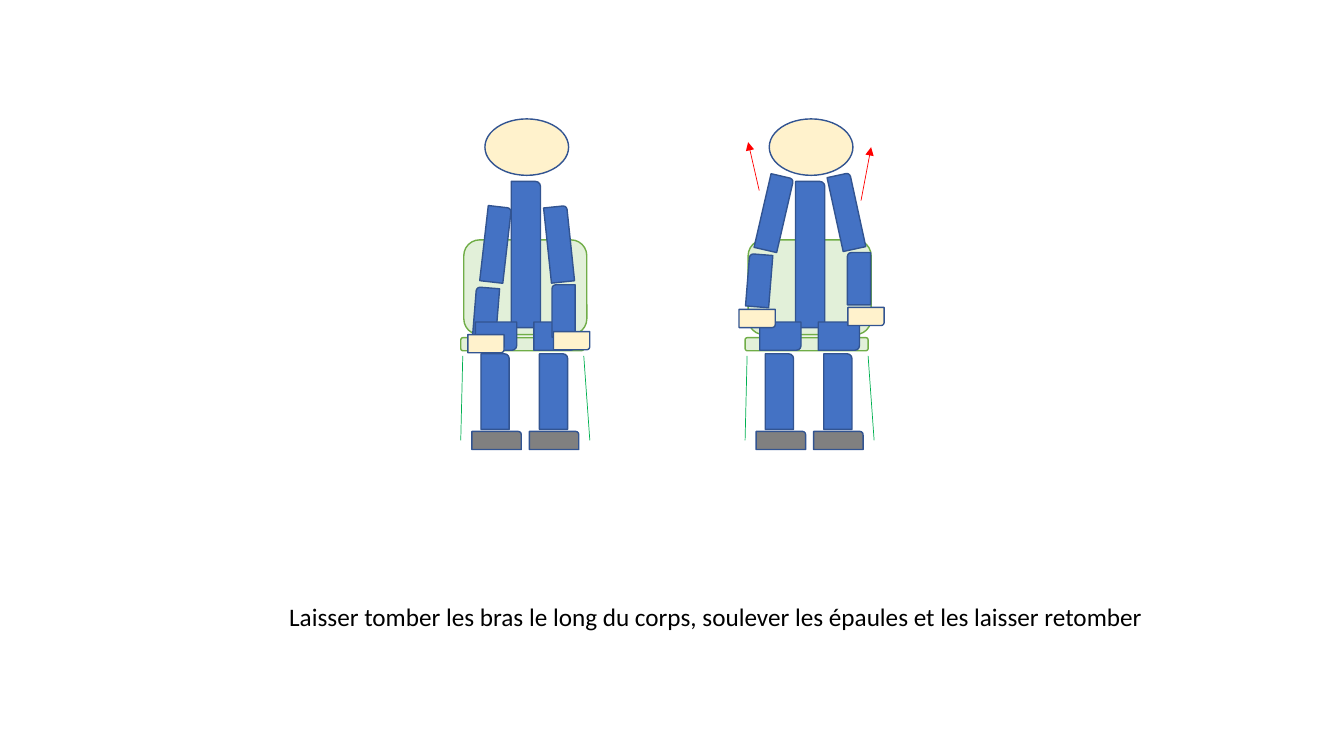
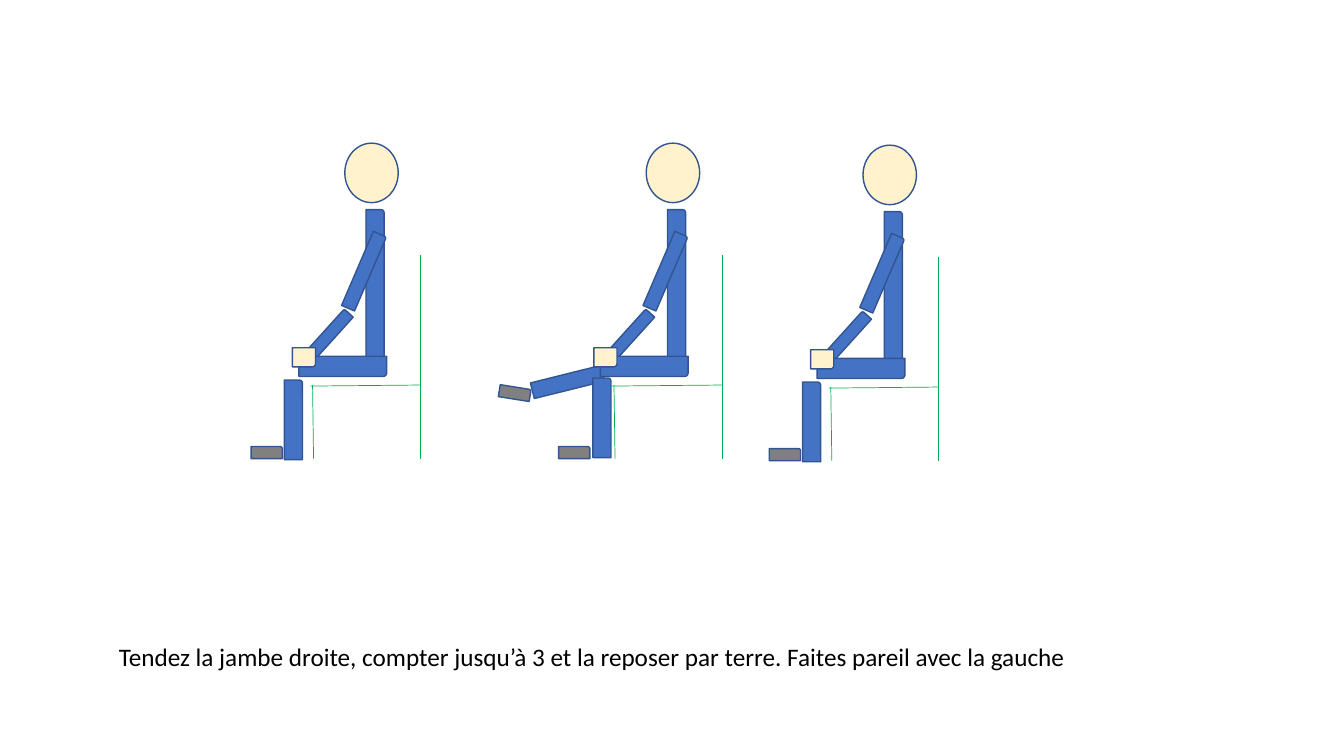
from dataclasses import dataclass, replace

from pptx import Presentation
from pptx import util as u
from pptx.dml.color import RGBColor
from pptx.enum import shapes as s, text as t
from pptx.oxml import ns, xmlchemy as xc

# Colours, shapes and grid (a cell is a tenth of an inch)
BLUE = RGBColor(0x44, 0x72, 0xC4)
NAVY = RGBColor(0x32, 0x54, 0x91)
SKIN = RGBColor(0xFF, 0xF2, 0xCC)
GREY = RGBColor(0x80, 0x80, 0x80)
MINT = RGBColor(0xE2, 0xF0, 0xD9)
LEAF = RGBColor(0x70, 0xAD, 0x47)
GREEN = RGBColor(0x00, 0xB0, 0x50)
RED = RGBColor(0xFF, 0x00, 0x00)
BLACK = RGBColor(0x00, 0x00, 0x00)
OVAL = s.MSO_SHAPE.OVAL
SOFT = s.MSO_SHAPE.ROUNDED_RECTANGLE
LIMB = s.MSO_SHAPE.ROUND_1_RECTANGLE
FONT = "Calibri"


def cell(n: float) -> int:
    return u.Inches(n / 10)


@dataclass(frozen=True)
class Part:
    """A body or chair part, in cells from the figure's corner."""
    col: float
    row: float
    wide: float
    high: float
    turn: float = 0
    fill: RGBColor = BLUE
    edge: RGBColor = NAVY
    kind: s.MSO_SHAPE = LIMB
    flip: bool = False


@dataclass(frozen=True)
class Line:
    """A chair line or an arrow, in cells from the figure's corner."""
    x1: float
    y1: float
    x2: float
    y2: float
    color: RGBColor = GREEN
    arrow: bool = False


@dataclass(frozen=True)
class Arm:
    """Corners of one arm seen from the front: upper arm, forearm, hand."""
    upper: tuple[float, float]
    lean: float
    fore: tuple[float, float]
    tilt: float
    hand: tuple[float, float]


# Drawing
def draw_part(group, part: Part, col: float, row: float) -> None:
    shape = group.shapes.add_shape(part.kind, cell(col + part.col), cell(row + part.row),
                                   cell(part.wide), cell(part.high))
    shape.rotation = part.turn
    if part.flip:
        shape._element.spPr.xfrm.set("flipV", "1")
    shape.shadow.inherit = False
    shape.fill.solid()
    shape.fill.fore_color.rgb = part.fill
    shape.line.color.rgb = part.edge
    shape.line.width = u.Pt(1)


def draw_line(group, line: Line, col: float, row: float) -> None:
    link = group.shapes.add_connector(s.MSO_CONNECTOR.STRAIGHT, cell(col + line.x1), cell(row + line.y1),
                                      cell(col + line.x2), cell(row + line.y2))
    link.line.color.rgb = line.color
    link.line.width = u.Pt(0.5)
    props = link._element.spPr
    if line.arrow:
        head = xc.OxmlElement("a:tailEnd")
        head.set("type", "triangle")
        props.find(ns.qn("a:ln")).append(head)
    props.append(xc.OxmlElement("a:effectLst"))


def draw(slide, col: float, row: float, items: list[Part | Line]) -> None:
    """Draw one figure as a group, from back to front."""
    group = slide.shapes.add_group_shape()
    for item in items:
        pen = draw_part if isinstance(item, Part) else draw_line
        pen(group, item, col, row)


def write(slide, words: str, *, col: float, row: float, wide: float, high: float = 4,
          size: float = 18, color: RGBColor = BLACK) -> None:
    frame = slide.shapes.add_textbox(cell(col), cell(row), cell(wide), cell(high)).text_frame
    frame.word_wrap = True
    frame.auto_size = t.MSO_AUTO_SIZE.SHAPE_TO_FIT_TEXT
    run = frame.paragraphs[0].add_run()
    run.text = words
    run.font.name = FONT
    run.font.size = u.Pt(size)
    run.font.color.rgb = color


# Figures
def front(left: Arm, right: Arm) -> list[Part | Line]:
    def arm(side: Arm) -> list[Part]:
        return [Part(*side.upper, 7.5, 2.3, side.lean, flip=True),
                Part(*side.fore, 5.2, 2.3, side.tilt)]

    def leg(col: float) -> list[Part]:
        return [Part(col, 23.3, 2.8, 7.5), Part(col + 0.1, 19.5, 2.8, 4.1, 90)]

    hands = [Part(*side.hand, 3.6, 1.8, fill=SKIN, flip=True) for side in (left, right)]
    feet = [Part(col, 31, 4.9, 1.8, fill=GREY) for col in (1.1, 6.8)]
    chair = [Part(0, 21.7, 12.2, 1.3, fill=MINT, edge=LEAF, kind=SOFT),
             Part(0.3, 12, 12.2, 9.4, fill=MINT, edge=LEAF, kind=SOFT)]
    body = [Part(2.4, 0, 8.3, 5.6, fill=SKIN, kind=OVAL), Part(5, 6.2, 2.9, 14.5)]
    props = [Line(0.2, 23.5, 0, 31.9), Line(12.2, 23.5, 12.8, 31.9)]
    return [*chair, *body, *arm(left), *leg(2), *leg(7.8), *arm(right), *hands, *feet, *props]


def side(lift: bool = False) -> list[Part | Line]:
    shin = Part(3.3, 23.5, 1.8, 7.9)
    foot = Part(0, 30.1, 3.1, 1.2, fill=GREY)
    body = [Part(9.3, 0, 5.3, 5.9, fill=SKIN, kind=OVAL),
            Part(11.4, 6.6, 1.8, 15.4),
            Part(7.2, 12, 8, 1.4, 293.3, flip=True),
            Part(5.1, 18.3, 5.5, 1.2, 312.1)]
    thigh = Part(8.1, 17.8, 2, 8.7, 90)
    hand = Part(4.1, 20.3, 2.3, 1.9, fill=SKIN, flip=True)
    chair = [Line(16.8, 11.1, 16.8, 31.3), Line(16.8, 24, 5.9, 24.1), Line(6.1, 24, 6.2, 31.3)]
    if not lift:
        return [*body, shin, thigh, foot, hand, *chair]
    high = [Part(0.7, 20.1, 1.6, 7.2, 76), thigh, replace(foot, col=-5.3, row=24.2, turn=9.1)]
    rest = [replace(shin, col=4, row=23.3), replace(foot, col=0.6)]
    return [*body, *high, hand, *chair, *rest]


# Slides
def lift_arms(slide) -> None:
    down = front(Arm((-0.3, 11.3), 276.5, (-0.1, 18.2), 274.6, (0.7, 21.4)),
                 Arm((6, 11.3), 264, (7.6, 17.9), 270, (9.2, 21.1)))
    up = front(Arm((-0.9, 8.2), 283, (-1.2, 14.9), 274.6, (-0.6, 18.9)),
               Arm((6.3, 8.1), 257.7, (8.7, 14.7), 270, (10.2, 18.7)))
    arrows = [Line(1.4, 7.1, 0.3, 2.3, RED, True), Line(11.5, 8.1, 12.5, 2.8, RED, True)]
    draw(slide, 45.7, 11.8, down)
    draw(slide, 73.9, 11.8, up + arrows)
    write(slide, "Laisser tomber les bras le long du corps, soulever les épaules et les laisser retomber",
          col=27.7, row=59.2, wide=96)


def lift_leg(slide) -> None:
    for col, row, lift in ((24.9, 14.2, False), (76.3, 14.4, False), (54.8, 14.2, True)):
        draw(slide, col, row, side(lift))
    write(slide, "Tendez la jambe droite, compter jusqu’à 3 et la reposer par terre. Faites pareil avec la gauche",
          col=10.8, row=63.1, wide=117.4)


def main() -> None:
    deck = Presentation()
    deck.slide_width, deck.slide_height = u.Inches(13.33), u.Inches(7.5)
    blank = deck.slide_layouts[6]
    for fill in (lift_arms, lift_leg):
        fill(deck.slides.add_slide(blank))
    deck.save("out.pptx")


if __name__ == "__main__":
    main()
